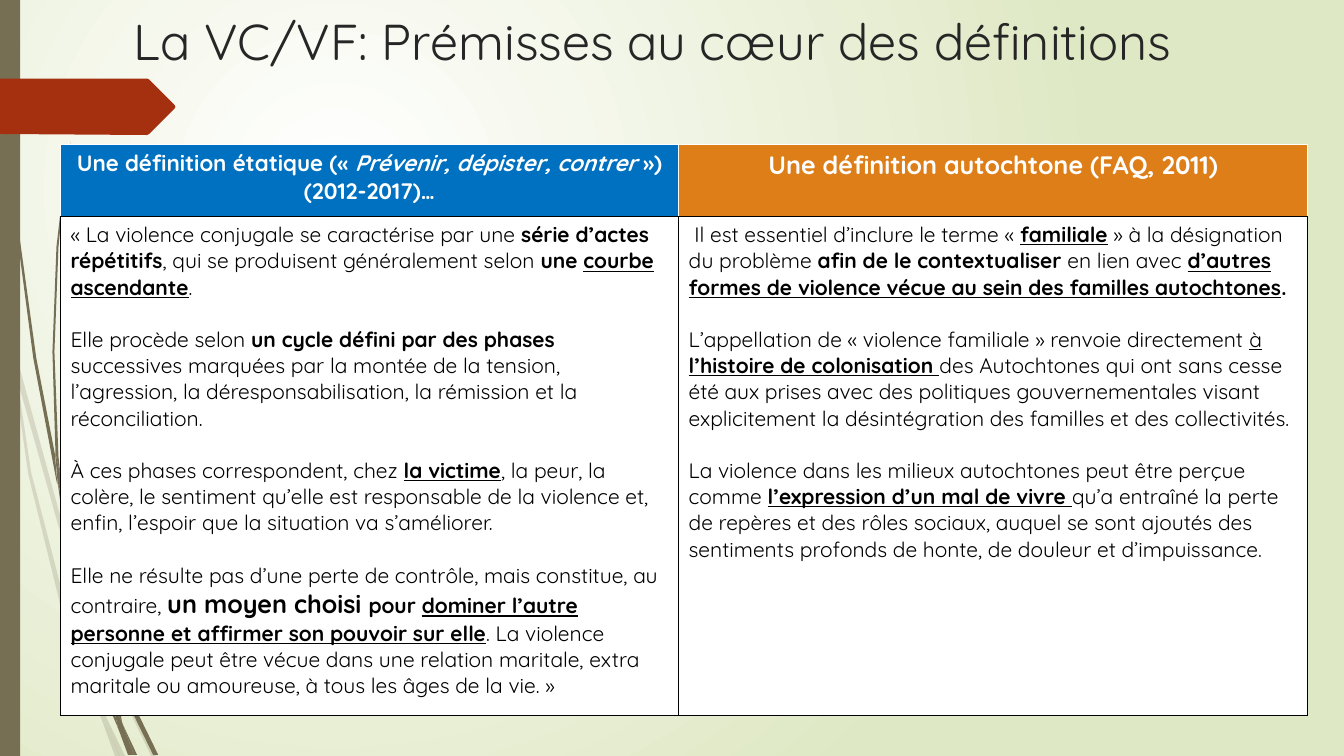
import pptx
import pptx.dml.color
import pptx.enum.shapes
import pptx.enum.text
import pptx.oxml.ns
import pptx.util
from lxml import etree
from pptx.dml.color import RGBColor
from pptx.oxml.ns import qn
from pptx.util import Inches

WHITE = RGBColor(0xFF, 0xFF, 0xFF)
BLACK = RGBColor(0, 0, 0)
PALE_GREEN = RGBColor(0xDF, 0xE8, 0xC4)
TAUPE = RGBColor(0x76, 0x6F, 0x54)
RUST = RGBColor(0xA5, 0x30, 0x10)
CHARCOAL = RGBColor(0x26, 0x26, 0x26)
BLUE = RGBColor(0x00, 0x70, 0xC0)
ORANGE = RGBColor(0xDE, 0x7E, 0x18)
FONT = "Quicksand"
CENTER = pptx.enum.text.PP_ALIGN.CENTER
LEFT = pptx.enum.text.PP_ALIGN.LEFT

PLAIN = {"size": 15, "bold": False}
BOLD = {"size": 15, "bold": True}
UNDERLINED = {"size": 15, "underline": True}
STRONG = {"size": 15, "bold": True, "underline": True}
LARGE = {"size": 18, "bold": True}
HEADING = {"size": 16, "bold": True, "color": WHITE}

FAINT_STEMS = [
    [(.11, 3.5), (.09, 3.22), (0, 2.82), (0, 2.99), (.1, 3.44)],
    [(.58, 5.22), (.84, 5.99), (.85, 5.86), (.62, 5.2), (.14, 3.45), (.17, 3.76)],
    [(.92, 6.07), (.88, 5.96), (.88, 6.1), (1.23, 6.94), (1.5, 7.5), (1.55, 7.5), (1.27, 6.92)],
    [(1.19, 7.5), (1.24, 7.5), (1.05, 7.11)],
    [(.93, 6.83), (.7, 6.19), (.31, 4.69), (.17, 3.76), (.11, 3.5), (.28, 4.7), (.65, 6.21),
     (.92, 6.93), (1.01, 7.14), (.99, 7.07)],
    [(.84, 5.99), (.87, 6.46), (.93, 6.83), (.96, 6.92), (1.05, 7.11), (1.03, 7.06),
     (.91, 6.46), (.88, 6.1), (.88, 6.08)],
    [(.88, 5.84), (.95, 5.2), (1.1, 4.62), (1.6, 3.49), (2.29, 2.45), (2.68, 1.98), (2.9, 1.75),
     (3.12, 1.54), (3.12, 1.53), (2.89, 1.75), (2.68, 1.97), (2.28, 2.44), (1.58, 3.48),
     (1.07, 4.61), (.92, 5.2), (.85, 5.84), (.85, 5.86), (.88, 5.96)],
    [(1.01, 7.14), (1.14, 7.5), (1.19, 7.5)],
    [(.88, 6.08), (.88, 6.1), (.88, 5.96), (.85, 5.86), (.84, 5.99)],
    [(.96, 6.92), (.93, 6.83), (.99, 7.07), (1.01, 7.14), (1.19, 7.5), (1.05, 7.11)],
]
SOLID_STEMS = [
    [(.07, 1.1), (.17, 2.33), (.33, 3.55), (.56, 4.77), (.57, 4.81), (.55, 4.57), (.55, 4.53),
     (.36, 3.55), (.19, 2.32), (.08, 1.09), (.05, .48), (.04, 0), (.03, 0), (.04, .48)],
    [(.88, 5.92), (1.06, 6.45), (1.06, 6.31), (.93, 5.9), (.6, 4.72), (.64, 5.05)],
    [(1.13, 6.49), (1.1, 6.41), (1.11, 6.56), (1.32, 7.08), (1.52, 7.49), (1.57, 7.49), (1.36, 7.06)],
    [(1.1, 6.91), (.98, 6.57), (.72, 5.56), (.64, 5.05), (.57, 4.77), (.68, 5.57), (.93, 6.59),
     (1.11, 7.08), (1.17, 7.22), (1.16, 7.17)],
    [(.6, 4.72), (.58, 4.53), (.54, 3.49), (.58, 2.45), (.63, 1.93), (.7, 1.41), (.62, 1.93),
     (.56, 2.45), (.52, 3.49), (.55, 4.49)],
    [(1.33, 7.49), (1.36, 7.49), (1.22, 7.19)],
    [(.57, 4.77), (.64, 5.05), (.6, 4.72), (.55, 4.49), (.55, 4.53)],
    [(1.11, 6.33), (1.15, 5.9), (1.25, 5.52), (1.58, 4.76), (2.05, 4.06), (2.31, 3.74), (2.45, 3.59),
     (2.61, 3.44), (2.6, 3.44), (2.45, 3.58), (2.31, 3.73), (2.04, 4.05), (1.56, 4.74),
     (1.22, 5.51), (1.12, 5.9), (1.06, 6.31), (1.1, 6.41)],
    [(1.17, 7.22), (1.27, 7.49), (1.31, 7.49)],
    [(1.06, 6.45), (1.1, 6.91), (1.16, 7.06), (1.22, 7.19), (1.21, 7.16), (1.11, 6.56), (1.09, 6.51)],
    [(1.06, 6.45), (1.09, 6.51), (1.11, 6.56), (1.1, 6.41), (1.06, 6.31)],
    [(1.16, 7.06), (1.1, 6.91), (1.16, 7.17), (1.17, 7.22), (1.3, 7.49), (1.33, 7.49), (1.22, 7.19)],
]
ARROW = [(0, .78), (1.46, .78), (1.48, .79), (1.73, 1.04), (1.74, 1.06), (1.73, 1.08),
         (1.48, 1.33), (1.46, 1.34), (0, 1.33)]

STATE_HEADING = [[("Une définition étatique («\u00a0", HEADING),
                  ("Prévenir, dépister, contrer", {**HEADING, "italic": True}),
                  ("\u00a0») (2012-2017)…", HEADING)]]
INDIGENOUS_HEADING = [[("Une définition autochtone (FAQ, 2011)", {**HEADING, "size": 18})]]
STATE_DEFINITION = [
    [("« La violence conjugale se caractérise par une ", PLAIN), ("série d’actes répétitifs", BOLD),
     (", qui se produisent généralement selon ", PLAIN), ("une ", BOLD),
     ("courbe ascendante", STRONG), (".", PLAIN)],
    [("Elle procède selon ", PLAIN), ("un cycle défini par des phases ", BOLD),
     ("successives marquées par la montée de la tension, l’agression, la déresponsabilisation, "
      "la rémission et la réconciliation.", PLAIN)],
    [("À ces phases correspondent, chez ", PLAIN), ("la victime", STRONG),
     (", la peur, la colère, le sentiment qu’elle est responsable de la violence et, enfin, "
      "l’espoir que la situation va s’améliorer.", PLAIN)],
    [("Elle ne résulte pas d’une perte de contrôle, mais constitue, au contraire, ", PLAIN),
     ("un moyen choisi ", LARGE), ("pour ", BOLD),
     ("dominer l’autre personne et affirmer son pouvoir sur elle", STRONG),
     (". La violence conjugale peut être vécue dans une relation maritale, extra maritale ou "
      "amoureuse, à tous les âges de la vie. »", PLAIN)],
]
INDIGENOUS_DEFINITION = [
    [(" Il est essentiel d’inclure le terme « ", PLAIN), ("familiale", STRONG),
     (" » à la désignation du problème ", PLAIN), ("afin de le contextualiser", BOLD),
     (" en lien avec ", PLAIN),
     ("d’autres formes de violence vécue au sein des familles autochtones", STRONG), (".", BOLD)],
    [("L’appellation de « violence familiale » renvoie directement ", PLAIN), ("à ", UNDERLINED),
     ("l’histoire de colonisation ", STRONG),
     ("des Autochtones qui ont sans cesse été aux prises avec des politiques gouvernementales "
      "visant explicitement la désintégration des familles et des collectivités.", PLAIN)],
    [("La violence dans les milieux autochtones peut être perçue comme ", PLAIN),
     ("l’expression d’un mal de vivre ", STRONG),
     ("qu’a entraîné la perte de repères et des rôles sociaux, auquel se sont ajoutés des "
      "sentiments profonds de honte, de douleur et d’impuissance.", PLAIN)],
]


def paint_background(page):
    fill = page.background.fill
    fill.gradient()
    for stop, color in zip(fill.gradient_stops, (WHITE, PALE_GREEN)):
        stop.color.rgb = color
    linear = page.element.find(".//" + qn("a:lin"))
    radial = etree.Element(qn("a:path"), path="circle")
    etree.SubElement(radial, qn("a:fillToRect"), l="50000", t="50000", r="100000", b="100000")
    linear.getparent().replace(linear, radial)


def paint_shape(shape, color, opacity=100):
    shape.shadow.inherit = False
    shape.line.fill.background()
    shape.fill.solid()
    shape.fill.fore_color.rgb = color
    if opacity < 100:
        tint = shape.element.spPr.find(".//" + qn("a:srgbClr"))
        etree.SubElement(tint, qn("a:alpha"), val=str(opacity * 1000))


def add_outline(page, points, color, opacity=100):
    corners = [(Inches(x), Inches(y)) for x, y in points]
    builder = page.shapes.build_freeform(*corners[0])
    builder.add_line_segments(corners[1:], close=True)
    paint_shape(builder.convert_to_shape(), color, opacity)


def write_text(frame, paragraphs, align):
    """Fill a text frame with paragraphs, each a list of (text, format) spans."""
    for index, spans in enumerate(paragraphs):
        para = frame.add_paragraph() if index else frame.paragraphs[0]
        para.alignment = align
        if index:
            para.space_before = pptx.util.Pt(18.75)
        for text, style in spans:
            span = para.add_run()
            span.text = text
            values = {"name": FONT, **style, "size": pptx.util.Pt(style["size"])}
            span.font.color.rgb = values.pop("color", BLACK)
            for name, value in values.items():
                setattr(span.font, name, value)


def add_title(page, text):
    box = page.shapes.add_textbox(Inches(0.6), Inches(0.05), Inches(11.61), Inches(1.63))
    box.text_frame.word_wrap = True
    write_text(box.text_frame, [[(text, {"size": 36, "color": CHARCOAL})]], CENTER)


def set_borders(cell, colors):
    """Draw one-point borders, with colours given by side: L, R, T, B."""
    properties = cell._tc.get_or_add_tcPr()
    for side, color in zip("LRTB", colors):
        line = etree.SubElement(properties, qn("a:ln" + side), w=str(pptx.util.Pt(1)))
        fill = etree.SubElement(line, qn("a:solidFill"))
        etree.SubElement(fill, qn("a:srgbClr"), val=str(color))


def add_definitions(page):
    table = page.shapes.add_table(2, 2, Inches(0.6), Inches(1.43), Inches(12.37), Inches(5.67)).table
    table.first_row = table.horz_banding = False
    for column, width in zip(table.columns, (6.13, 6.24)):
        column.width = Inches(width)
    for row, height in zip(table.rows, (0.72, 4.95)):
        row.height = Inches(height)
    header_borders, body_borders = [WHITE] * 3 + [BLACK], [BLACK] * 4
    rows = [
        (CENTER, header_borders, [(STATE_HEADING, BLUE), (INDIGENOUS_HEADING, ORANGE)]),
        (LEFT, body_borders, [(STATE_DEFINITION, WHITE), (INDIGENOUS_DEFINITION, WHITE)]),
    ]
    for row, (align, borders, contents) in zip(table.rows, rows):
        for cell, (paragraphs, color) in zip(row.cells, contents):
            set_borders(cell, borders)
            cell.fill.solid()
            cell.fill.fore_color.rgb = color
            write_text(cell.text_frame, paragraphs, align)


def main():
    deck = pptx.Presentation()
    deck.slide_width, deck.slide_height = Inches(13.33), Inches(7.5)
    page = deck.slides.add_slide(deck.slide_layouts[6])
    paint_background(page)
    for stems, opacity in ((FAINT_STEMS, 20), (SOLID_STEMS, 100)):
        for points in stems:
            add_outline(page, points, TAUPE, opacity)
    band = page.shapes.add_shape(pptx.enum.shapes.MSO_SHAPE.RECTANGLE, 0, 0, Inches(0.2), Inches(7.5))
    paint_shape(band, TAUPE)
    add_outline(page, ARROW, RUST)
    add_title(page, " La VC/VF: Prémisses au cœur des définitions")
    add_definitions(page)
    deck.save("out.pptx")


if __name__ == "__main__":
    main()
